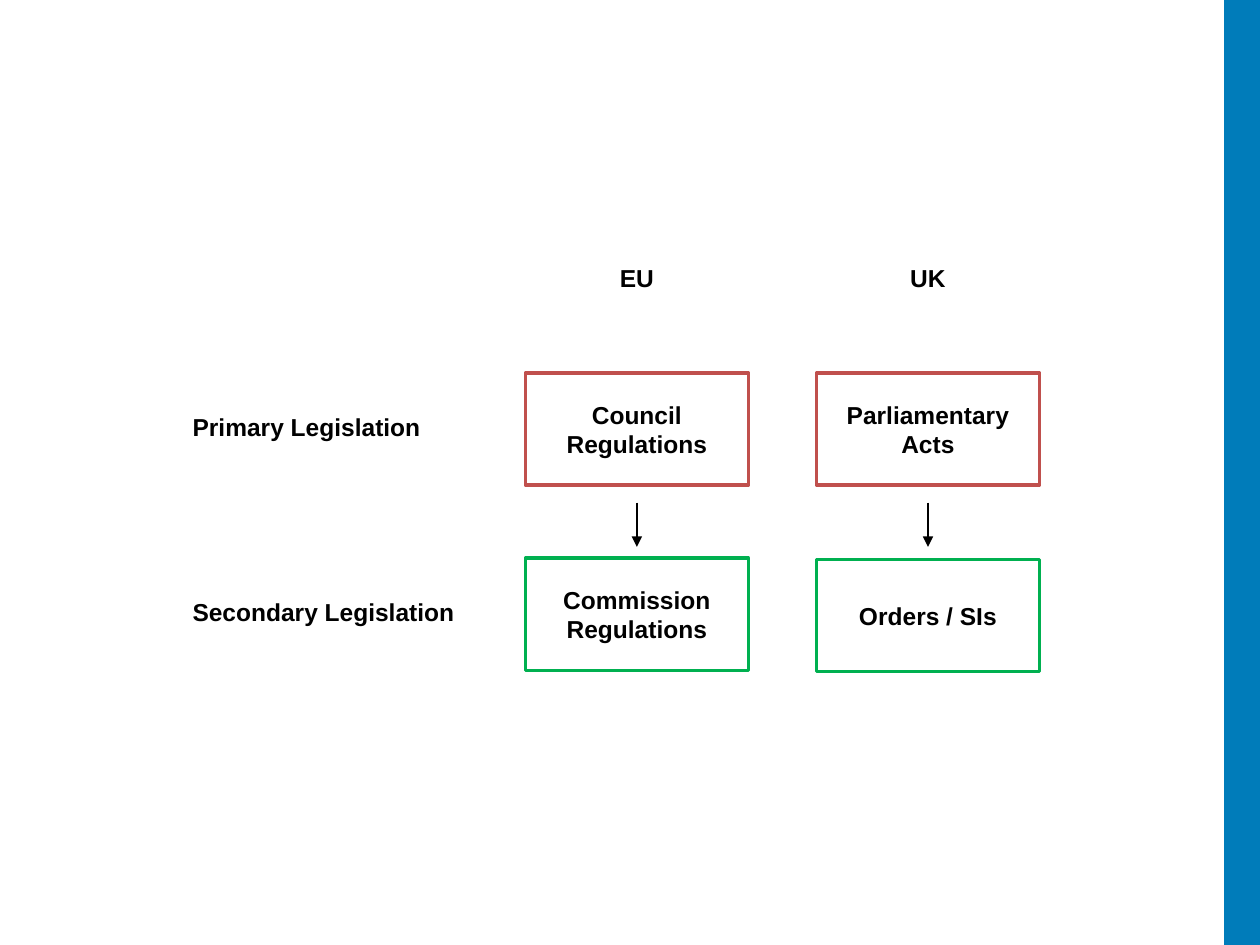
from dataclasses import dataclass

from lxml.etree import SubElement
from pptx import Presentation
from pptx.dml.color import RGBColor
from pptx.enum.shapes import MSO_CONNECTOR as Connector, MSO_SHAPE as Shape
from pptx.enum.text import MSO_ANCHOR as Anchor, PP_ALIGN as Align
from pptx.oxml.ns import qn
from pptx.slide import Slide
from pptx.util import Inches, Pt

BLACK = RGBColor(0x00, 0x00, 0x00)
WHITE = RGBColor(0xFF, 0xFF, 0xFF)
BLUE = RGBColor(0x00, 0x7C, 0xBA)
RED = RGBColor(0xC0, 0x50, 0x4D)
GREEN = RGBColor(0x00, 0xB0, 0x50)

BOX_WIDTH, BOX_HEIGHT = 1.77, 0.89
HEADING_TOP, PRIMARY_TOP = 2.04, 2.96
LABEL_LEFT = 1.43


@dataclass
class LegislationChart:
    """Draws the elements of the legislation chart in one style."""

    slide: Slide
    font: str = "Arial"
    size: int = 14

    def add_lines(self, frame, lines, align):
        for number, line in enumerate(lines):
            paragraph = frame.add_paragraph() if number else frame.paragraphs[0]
            paragraph.alignment = align
            run = paragraph.add_run()
            run.text = line
            run.font.name = self.font
            run.font.size = Pt(self.size)
            run.font.bold = True
            run.font.color.rgb = BLACK

    def rectangle(self, left, top, width, height, outline, fill=None):
        shape = self.slide.shapes.add_shape(
            Shape.RECTANGLE, Inches(left), Inches(top), Inches(width), Inches(height))
        shape.shadow.inherit = False
        if fill is None:
            shape.fill.background()
        else:
            shape.fill.solid()
            shape.fill.fore_color.rgb = fill
        shape.line.color.rgb = outline
        shape.line.width = Pt(2)
        return shape

    def box(self, left, top, lines, outline, fill=None):
        frame = self.rectangle(left, top, BOX_WIDTH, BOX_HEIGHT, outline, fill).text_frame
        frame.word_wrap = False
        frame.vertical_anchor = Anchor.MIDDLE
        self.add_lines(frame, lines, Align.CENTER)

    def label(self, left, top, width, height, text, align=Align.LEFT):
        frame = self.slide.shapes.add_textbox(
            Inches(left), Inches(top), Inches(width), Inches(height)).text_frame
        frame.word_wrap = True
        self.add_lines(frame, [text], align)

    def arrow(self, x, top, bottom):
        connector = self.slide.shapes.add_connector(
            Connector.STRAIGHT, Inches(x), Inches(top), Inches(x), Inches(bottom))
        connector.line.color.rgb = BLACK
        connector.line.width = Pt(0.75)
        properties = connector._element.spPr
        SubElement(properties.find(qn("a:ln")), qn("a:tailEnd"), type="triangle")
        SubElement(properties, qn("a:effectLst"))


def main():
    deck = Presentation()
    deck.slide_width, deck.slide_height = Inches(10), Inches(7.5)
    chart = LegislationChart(deck.slides.add_slide(deck.slide_layouts[6]))

    chart.rectangle(9.73, 0, 0.27, 7.5, BLUE, BLUE)
    jurisdictions = [
        ("UK", 6.48, ["Parliamentary", "Acts"], ["Orders / SIs"], 4.44),
        ("EU", 4.17, ["Council", "Regulations"], ["Commission", "Regulations"], 4.43),
    ]
    for heading, left, primary, secondary, secondary_top in jurisdictions:
        chart.box(left, secondary_top, secondary, GREEN)
        chart.arrow(left + BOX_WIDTH / 2, 3.99, 4.34)
        chart.box(left, PRIMARY_TOP, primary, RED, WHITE)
        chart.label(left, HEADING_TOP, BOX_WIDTH, 0.44, heading, Align.CENTER)

    chart.label(LABEL_LEFT, 3.22, 2.21, 0.34, "Primary Legislation")
    chart.label(LABEL_LEFT, 4.69, 2.47, 0.34, "Secondary Legislation")
    deck.save("out.pptx")


if __name__ == "__main__":
    main()
